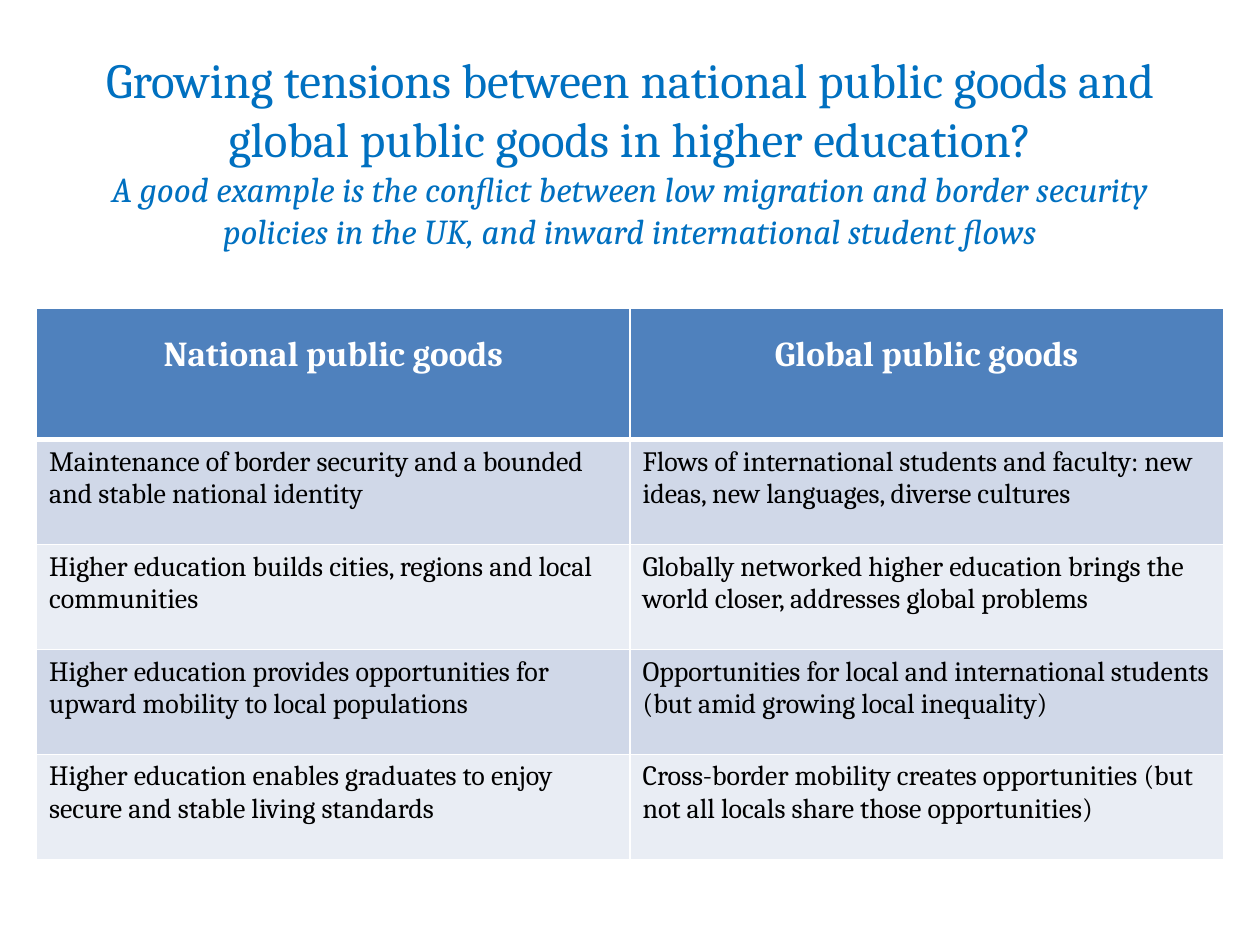
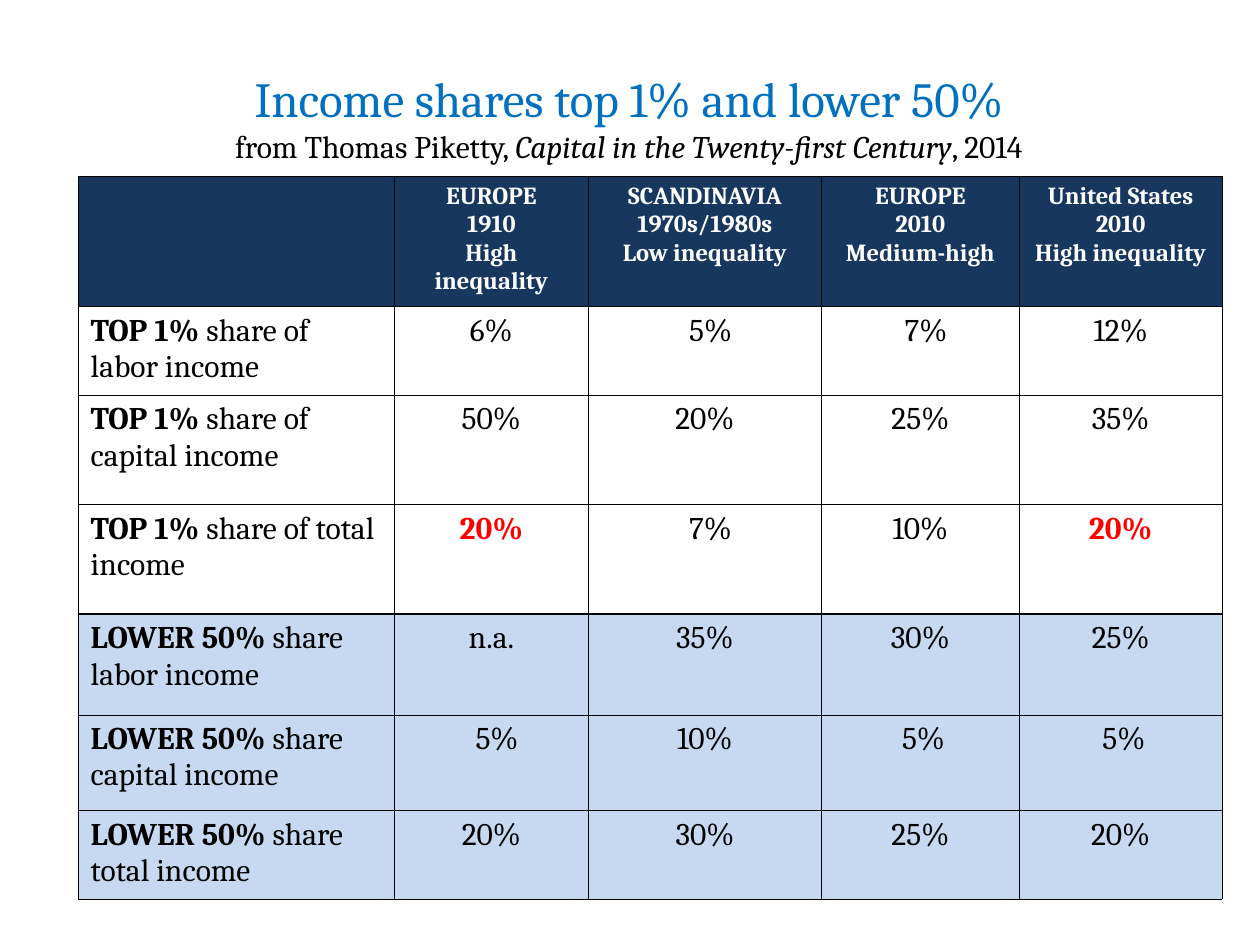
from pptx import Presentation
from pptx.dml.color import RGBColor
from pptx.enum.text import MSO_ANCHOR, PP_ALIGN
from pptx.oxml.ns import qn
from pptx.util import Inches, Pt
from lxml.etree import SubElement

FONT = "Cambria"
TITLE_BLUE = RGBColor(0x00, 0x70, 0xC0)
HEADER_BLUE = RGBColor(0x4F, 0x81, 0xBD)
BAND_DARK = RGBColor(0xD0, 0xD8, 0xE8)
BAND_LIGHT = RGBColor(0xE9, 0xED, 0xF4)
NAVY = RGBColor(0x17, 0x37, 0x5E)
PALE_BLUE = RGBColor(0xC6, 0xD9, 0xF1)
RED = RGBColor(0xFF, 0x00, 0x00)
BLACK = RGBColor(0x00, 0x00, 0x00)
WHITE = RGBColor(0xFF, 0xFF, 0xFF)

UNIT = Inches(0.1)  # the slide is a grid of 100 columns by 75 rows
COLUMNS, ROWS = 100, 75

GOODS = [
    ("National public goods", "Global public goods"),
    ("Maintenance of border security and a bounded and stable national identity",
     "Flows of international students and faculty: new ideas, new languages, diverse cultures"),
    ("Higher education builds cities, regions and local communities",
     "Globally networked higher education brings the world closer, addresses global problems"),
    ("Higher education provides opportunities for upward mobility to local populations",
     "Opportunities for local and international students (but amid growing local inequality)"),
    ("Higher education enables graduates to enjoy secure and stable living standards",
     "Cross-border mobility creates opportunities (but not all locals share those opportunities)"),
]

INCOME_HEADER = ["", "EUROPE\n1910\nHigh inequality", "SCANDINAVIA 1970s/1980s\nLow inequality",
                 "EUROPE\n2010\nMedium-high", "United States\n2010\nHigh inequality"]
INCOME_SHARES = [
    ("TOP 1%", " share of labor income", "6%", "5%", "7%", "12%"),
    ("TOP 1%", " share of capital income", "50%", "20%", "25%", "35%"),
    ("TOP 1%", " share of total income", "20%", "7%", "10%", "20%"),
    ("LOWER 50%", " share labor income", "n.a.", "35%", "30%", "25%"),
    ("LOWER 50%", " share capital income", "5%", "10%", "5%", "5%"),
    ("LOWER 50%", " share total income", "20%", "30%", "25%", "20%"),
]
# Extra left margin, by (row, column), that lines single digits up with the units above
DIGIT_INDENTS = {(1, 2): 0.9, (1, 3): 0.9, (3, 2): 0.9, (5, 1): 0.9, (5, 3): 0.5, (5, 4): 0.5}
HIGHLIGHTS = {(3, 1), (3, 4)}


def grid(length):
    return round(length * UNIT)


class Deck:
    """Holds the presentation, its style and the current slide."""

    def __init__(self):
        self.presentation = Presentation()
        self.presentation.slide_width = grid(COLUMNS)
        self.presentation.slide_height = grid(ROWS)
        self.slide = None

    def new_slide(self):
        self.slide = self.presentation.slides.add_slide(self.presentation.slide_layouts[6])

    def style(self, run, size, color, bold=False, italic=False):
        font = run.font
        font.name, font.size, font.bold, font.italic = FONT, Pt(size), bold, italic
        font.color.rgb = color

    def title(self, place, heading, subtitle, size, color):
        """Heading with a smaller line below; subtitle is (text, italic) pairs."""
        text_frame = self.slide.shapes.add_textbox(*map(grid, place)).text_frame
        text_frame.word_wrap = True
        text_frame.vertical_anchor = MSO_ANCHOR.MIDDLE
        paragraph = text_frame.paragraphs[0]
        paragraph.text = heading + "\v"
        paragraph.alignment = PP_ALIGN.CENTER
        self.style(paragraph.runs[0], 28, TITLE_BLUE)
        for text, italic in subtitle:
            run = paragraph.add_run()
            run.text = text
            self.style(run, size, color, italic=italic)

    def table(self, left, top, widths, heights, border, thin, heavy_row, heavy):
        """Empty bordered table; the edge under heavy_row has its own width."""
        frame = self.slide.shapes.add_table(len(heights), len(widths), grid(left), grid(top),
                                            grid(sum(widths)), grid(sum(heights)))
        table = frame.table
        table.first_row = table.horz_banding = False
        for column, width in zip(table.columns, widths):
            column.width = grid(width)
        for index, (row, height) in enumerate(zip(table.rows, heights)):
            row.height = grid(height)
            above = heavy if index == heavy_row + 1 else thin
            below = heavy if index == heavy_row else thin
            for cell in row.cells:
                self.borders(cell, border, {"L": thin, "R": thin, "T": above, "B": below})
        return table

    def borders(self, cell, color, widths):
        properties = cell._tc.get_or_add_tcPr()
        for side, width in widths.items():
            line = SubElement(properties, qn(f"a:ln{side}"), w=str(Pt(width)))
            fill = SubElement(line, qn("a:solidFill"))
            SubElement(fill, qn("a:srgbClr"), val=str(color))

    def cell(self, cell, text, size, color=BLACK, fill=None, bold=False, centered=True,
             spacing=None, indent=0):
        if fill is None:
            cell.fill.background()
        else:
            cell.fill.solid()
            cell.fill.fore_color.rgb = fill
        cell.margin_left = grid(1 + indent)
        cell.text_frame.text = text
        for paragraph in cell.text_frame.paragraphs:
            paragraph.alignment = PP_ALIGN.CENTER if centered else PP_ALIGN.LEFT
            if spacing:
                paragraph.line_spacing = spacing
            for run in paragraph.runs:
                self.style(run, size, color, bold)

    def label(self, cell, lead, rest, size, fill):
        """Row label that opens with a bold lead."""
        self.cell(cell, lead, size, fill=fill, bold=True, centered=False)
        run = cell.text_frame.paragraphs[0].add_run()
        run.text = rest
        self.style(run, size, BLACK)


def public_goods_slide(deck):
    deck.new_slide()
    deck.title((5, 2.7, 90, 18.5),
               "Growing tensions between national public goods and global public goods in higher education?",
               [("A good example is the conflict between low migration and border security policies "
                 "in the UK, and inward international student flows", True)], 20, TITLE_BLUE)
    table = deck.table(2.9, 24.5, [47.1] * 2, [10.4] + [8.33] * 4, WHITE, 1, 0, 3)
    for row, texts in enumerate(GOODS):
        for column, text in enumerate(texts):
            cell = table.cell(row, column)
            if row == 0:
                deck.cell(cell, text, 20, WHITE, HEADER_BLUE, bold=True, spacing=1.5)
            else:
                band = BAND_DARK if row % 2 else BAND_LIGHT
                deck.cell(cell, text, 16, fill=band, centered=False)


def income_slide(deck):
    deck.new_slide()
    deck.title((1.2, 3, 97.4, 12.5), "Income shares top 1% and lower 50%",
               [("from Thomas Piketty, ", False), ("Capital in the Twenty-first Century", True),
                (", 2014", False)], 18, BLACK)
    table = deck.table(6.2, 14, [25.1, 15.4, 18.5, 15.7, 16.1],
                       [9.9, 6.75, 8.7, 8.7, 8, 7.6, 6.8], BLACK, 0.5, 3, 1)
    for column, text in enumerate(INCOME_HEADER):
        deck.cell(table.cell(0, column), text, 14, WHITE, NAVY, bold=True)
    for row, (lead, rest, *values) in enumerate(INCOME_SHARES, start=1):
        fill = PALE_BLUE if lead.startswith("LOWER") else None
        deck.label(table.cell(row, 0), lead, rest, 18, fill)
        for column, value in enumerate(values, start=1):
            place = (row, column)
            highlighted = place in HIGHLIGHTS
            deck.cell(table.cell(*place), value, 18, RED if highlighted else BLACK, fill,
                      bold=highlighted, indent=DIGIT_INDENTS.get(place, 0))


def main():
    deck = Deck()
    public_goods_slide(deck)
    income_slide(deck)
    deck.presentation.save("out.pptx")


if __name__ == "__main__":
    main()
